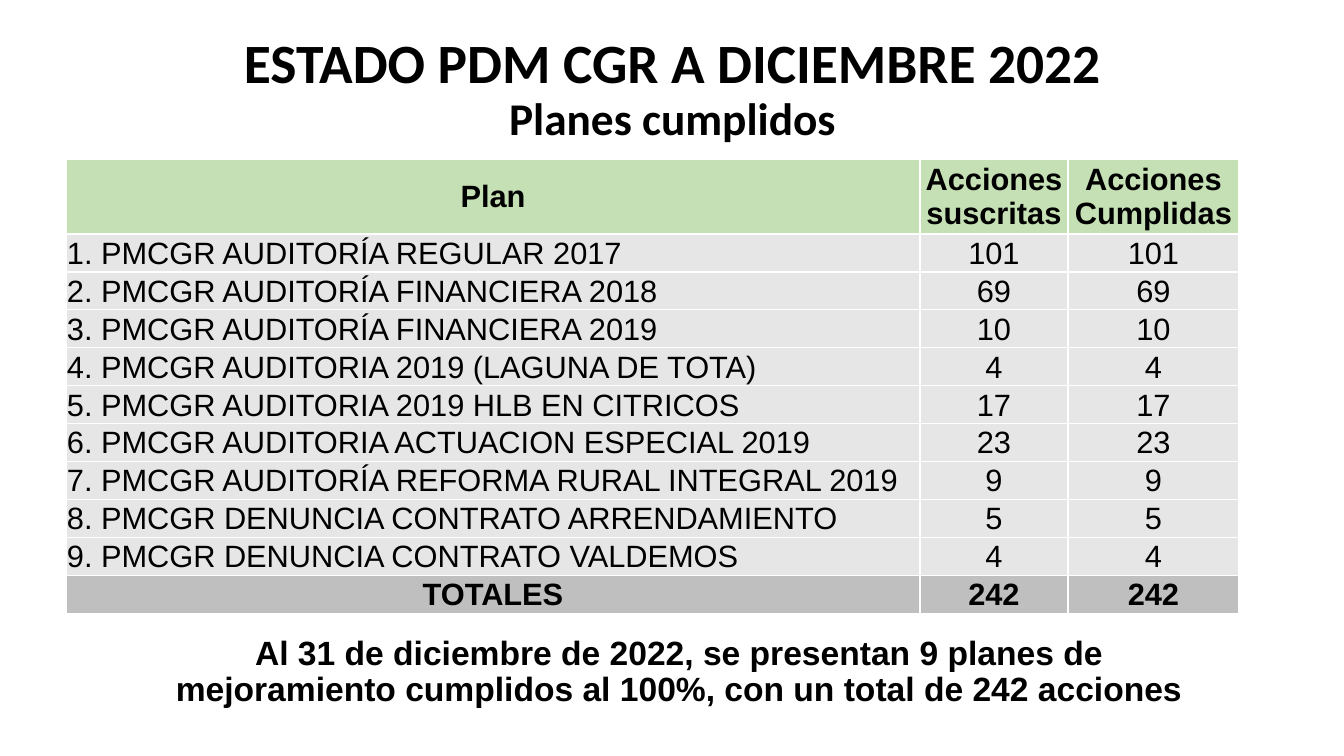
from lxml import etree
from pptx import Presentation
from pptx.dml.color import RGBColor
from pptx.enum.text import MSO_ANCHOR, PP_ALIGN
from pptx.oxml.ns import qn
from pptx.util import Pt

PX = 914400 / 100.8
CENTER, LEFT = PP_ALIGN.CENTER, PP_ALIGN.LEFT
MIDDLE = MSO_ANCHOR.MIDDLE
BLACK, WHITE = "000000", "FFFFFF"
GREEN, LIGHT_GRAY, GRAY = "C5E0B4", "E7E6E6", "BFBFBF"

TITLE = "ESTADO PDM CGR A DICIEMBRE 2022\vPlanes cumplidos"
NOTE = ("Al 31 de diciembre de 2022, se presentan 9 planes de mejoramiento "
        "cumplidos al 100%, con un total de 242 acciones")
HEADERS = ["Plan", "Acciones suscritas", "Acciones Cumplidas"]
PLANS = [
    ("PMCGR AUDITORÍA REGULAR 2017", 101),
    ("PMCGR AUDITORÍA FINANCIERA 2018", 69),
    ("PMCGR AUDITORÍA FINANCIERA 2019", 10),
    ("PMCGR AUDITORIA 2019 (LAGUNA DE TOTA)", 4),
    ("PMCGR AUDITORIA 2019 HLB EN CITRICOS", 17),
    ("PMCGR AUDITORIA ACTUACION ESPECIAL 2019", 23),
    ("PMCGR AUDITORÍA REFORMA RURAL INTEGRAL 2019", 9),
    ("PMCGR DENUNCIA CONTRATO ARRENDAMIENTO", 5),
    ("PMCGR DENUNCIA CONTRATO VALDEMOS", 4),
]
COLUMN_WIDTHS = [854, 148, 171]
HEADER_HEIGHT, ROW_HEIGHT = 70, 35


def px(length):
    return round(length * PX)


def color(value):
    return RGBColor.from_string(value)


def format_span(span, font_name, size, bold=True):
    span.font.name = font_name
    span.font.size = Pt(size)
    span.font.bold = bold
    span.font.color.rgb = color(BLACK)


def add_heading(page, left, top, width, height, text, font_name, sizes):
    box = page.shapes.add_textbox(px(left), px(top), px(width), px(height))
    frame = box.text_frame
    frame.word_wrap = True
    frame.vertical_anchor = MIDDLE
    para = frame.paragraphs[0]
    para.text = text
    para.alignment = CENTER
    para.line_spacing = 0.9
    for span, size in zip(para.runs, sizes):
        format_span(span, font_name, size)


def add_borders(cell):
    properties = cell._tc.get_or_add_tcPr()
    for position, side in enumerate(("a:lnL", "a:lnR", "a:lnT", "a:lnB")):
        line = etree.Element(qn(side), w=str(Pt(1)))
        fill = etree.SubElement(line, qn("a:solidFill"))
        etree.SubElement(fill, qn("a:srgbClr"), val=WHITE)
        properties.insert(position, line)


def fill_cell(cell, text, fill, bold, alignment):
    cell.fill.solid()
    cell.fill.fore_color.rgb = color(fill)
    cell.margin_left = cell.margin_right = cell.margin_top = px(1)
    cell.margin_bottom = 0
    cell.vertical_anchor = MIDDLE
    para = cell.text_frame.paragraphs[0]
    para.text = str(text)
    para.alignment = alignment
    format_span(para.runs[0], "Arial", 22, bold)
    add_borders(cell)


def add_plan_table(page, left, top):
    total = sum(count for _, count in PLANS)
    plan_rows = [(f"{number}. {name}", count, count)
                 for number, (name, count) in enumerate(PLANS, 1)]
    rows = [HEADERS, *plan_rows, ("TOTALES", total, total)]
    fills = [GREEN] + [LIGHT_GRAY] * len(PLANS) + [GRAY]
    height = HEADER_HEIGHT + ROW_HEIGHT * (len(rows) - 1)
    table = page.shapes.add_table(
        len(rows), len(HEADERS), px(left), px(top),
        px(sum(COLUMN_WIDTHS)), px(height)).table
    table.first_row = False
    table.horz_banding = False
    for column, width in zip(table.columns, COLUMN_WIDTHS):
        column.width = px(width)
    for row_index, (values, fill) in enumerate(zip(rows, fills)):
        table.rows[row_index].height = px(ROW_HEIGHT if row_index else HEADER_HEIGHT)
        is_plan = fill == LIGHT_GRAY
        for column_index, value in enumerate(values):
            alignment = LEFT if is_plan and column_index == 0 else CENTER
            fill_cell(table.cell(row_index, column_index), value, fill,
                      not is_plan, alignment)


def main():
    deck = Presentation()
    deck.slide_width, deck.slide_height = px(1344), px(756)
    page = deck.slides.add_slide(deck.slide_layouts[6])
    add_heading(page, 93, 40, 1159, 101, TITLE, "Calibri", [39.6, 32.4])
    add_heading(page, 131, 629, 1096, 87, NOTE, "Arial", [24])
    add_plan_table(page, 66, 159)
    deck.save("out.pptx")


if __name__ == "__main__":
    main()
